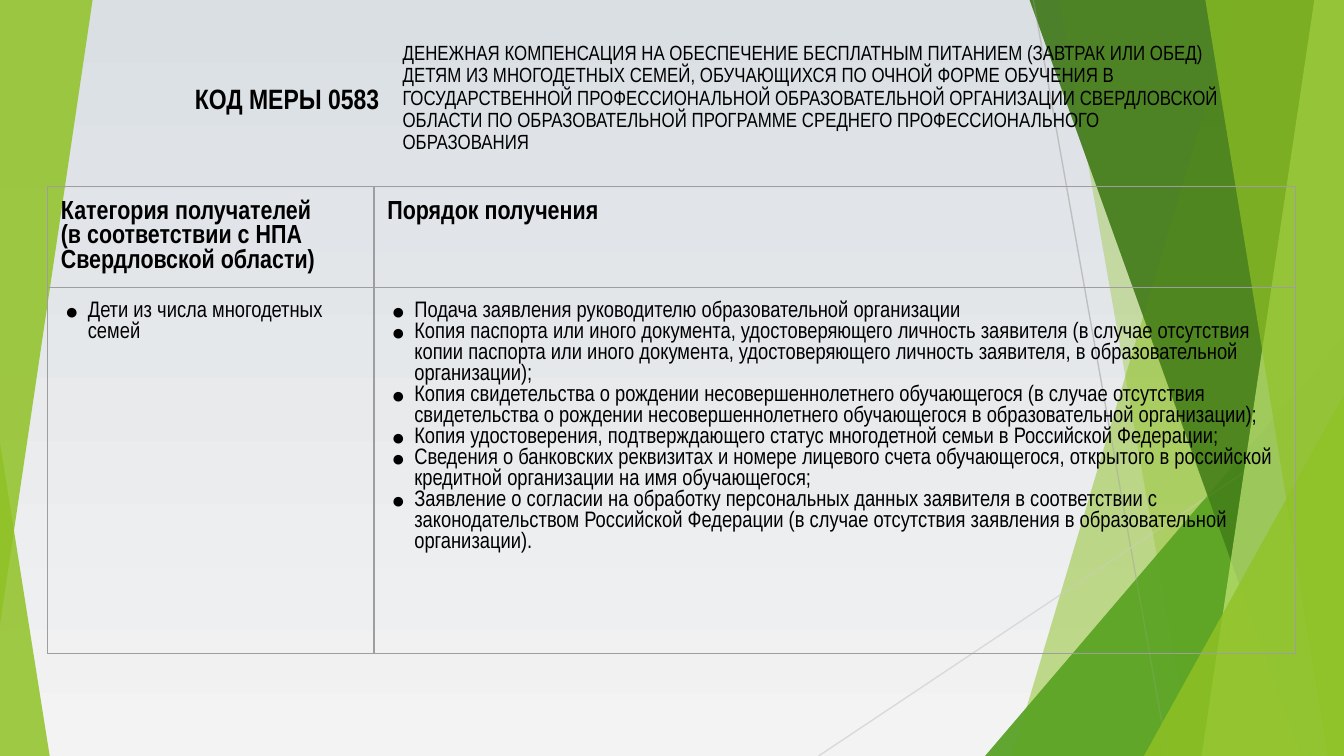
from dataclasses import dataclass

from lxml import etree
from pptx import Presentation
from pptx.dml.color import RGBColor
from pptx.enum.shapes import MSO_CONNECTOR, MSO_SHAPE
from pptx.enum.text import MSO_ANCHOR, PP_ALIGN
from pptx.oxml.ns import qn
from pptx.util import Cm, Pt

TRIANGLE = MSO_SHAPE.ISOSCELES_TRIANGLE
STRAIGHT = MSO_CONNECTOR.STRAIGHT
MIDDLE = MSO_ANCHOR.MIDDLE
LEFT, RIGHT = PP_ALIGN.LEFT, PP_ALIGN.RIGHT


@dataclass(frozen=True)
class Theme:
    font: str = "Arial Narrow"
    text: str = "000000"
    sky: str = "DADFE4"
    ground: str = "F3F3F3"
    lime: str = "90C226"
    green: str = "54A021"
    forest: str = "3F7819"
    pale: str = "C0E474"
    steep_line: str = "BFBFBF"
    flat_line: str = "D9D9D9"
    border: str = "9E9E9E"
    code_size: int = 15
    header_size: int = 14
    body_size: int = 12
    title_size: int = 11


theme = Theme()
WIDTH, HEIGHT = 25.4, 14.29

presentation = Presentation()
presentation.slide_width = Cm(WIDTH)
presentation.slide_height = Cm(HEIGHT)
slide = presentation.slides.add_slide(presentation.slide_layouts[6])

background = slide.background.fill
background.gradient()
background.gradient_angle = 270
for stop, color in zip(background.gradient_stops, (theme.sky, theme.ground)):
    stop.color.rgb = RGBColor.from_string(color)


def paint(shape, color, opacity):
    shape.shadow.inherit = False
    shape.fill.solid()
    shape.fill.fore_color.rgb = RGBColor.from_string(color)
    color_node = shape.fill._xPr.find(qn("a:solidFill"))[0]
    etree.SubElement(color_node, qn("a:alpha"), val=str(opacity * 1000))
    shape.line.fill.background()


def add_text(paragraph, text, size, bold=False):
    run = paragraph.add_run()
    run.text = text
    run.font.name = theme.font
    run.font.size = Pt(size)
    run.font.bold = bold
    run.font.color.rgb = RGBColor.from_string(theme.text)


facets = [
    ("band", 23.39, 19.13, theme.lime, 30),
    ("band", 20.02, 22.53, theme.lime, 20),
    ("corner", 6.78, 7.94, theme.green, 72),
    ("band", 19.46, 24.59, theme.forest, 70),
    ("band", 24.84, 22.71, theme.pale, 70),
    ("band", 22.78, 25.1, theme.lime, 65),
    ("corner", 3.78, 6.82, theme.lime, 80),
]
left_wedges = [
    (8.36, 0.94, 5.93, 0, 0),
    (0, 1.75, 11.81, 1, 180),
]
guide_lines = [
    (19.53, 0, 22.07, HEIGHT, theme.steep_line),
    (WIDTH, 7.67, 15.47, HEIGHT, theme.flat_line),
]

for layer, (top, width, height, apex, rotation) in enumerate(left_wedges):
    if layer == 1:
        for x1, y1, x2, y2, color in guide_lines:
            connector = slide.shapes.add_connector(STRAIGHT, Cm(x1), Cm(y1), Cm(x2), Cm(y2))
            connector.line.color.rgb = RGBColor.from_string(color)
            connector.line.width = Pt(0.75)
            etree.SubElement(connector._element.spPr, qn("a:effectLst"))
    for kind, first, second, color, opacity in facets:
        if kind == "band":
            builder = slide.shapes.build_freeform(Cm(first), Cm(0))
            corners = [(WIDTH, 0), (WIDTH, HEIGHT), (second, HEIGHT)]
            builder.add_line_segments([(Cm(x), Cm(y)) for x, y in corners], close=True)
            facet = builder.convert_to_shape()
        else:
            facet = slide.shapes.add_shape(
                TRIANGLE, Cm(WIDTH - first), Cm(HEIGHT - second), Cm(first), Cm(second)
            )
            facet.adjustments[0] = 1
        paint(facet, color, opacity)
    wedge = slide.shapes.add_shape(TRIANGLE, Cm(0), Cm(top), Cm(width), Cm(height))
    wedge.adjustments[0] = apex
    wedge.rotation = rotation
    paint(wedge, theme.lime, 85)

header_cells = [
    ["Категория получателей", "(в соответствии с НПА Свердловской области)"],
    ["Порядок получения"],
]
body_cells = [
    ["Дети из числа многодетных семей"],
    [
        "Подача заявления руководителю образовательной организации",
        "Копия паспорта или иного документа, удостоверяющего личность заявителя (в случае отсутствия копии паспорта или иного документа, удостоверяющего личность заявителя, в образовательной организации);",
        "Копия свидетельства о рождении несовершеннолетнего обучающегося (в случае отсутствия свидетельства о рождении несовершеннолетнего обучающегося в образовательной организации);",
        "Копия удостоверения, подтверждающего статус многодетной семьи в Российской Федерации;",
        "Сведения о банковских реквизитах и номере лицевого счета обучающегося, открытого в российской кредитной организации на имя обучающегося;",
        "Заявление о согласии на обработку персональных данных заявителя в соответствии с законодательством Российской Федерации (в случае отсутствия заявления в образовательной организации).",
    ],
]

table = slide.shapes.add_table(2, 2, Cm(0.9), Cm(3.53), Cm(23.59), Cm(8.82)).table
table.first_row = False
table.horz_banding = False
for column, width in zip(table.columns, (6.17, 17.42)):
    column.width = Cm(width)
for row, height in zip(table.rows, (1.91, 6.91)):
    row.height = Cm(height)

for cell in table.iter_cells():
    cell.margin_left = cell.margin_right = Cm(0.25)
    cell.margin_top = cell.margin_bottom = Cm(0.25)
    properties = cell._tc.get_or_add_tcPr()
    for side in ("a:lnL", "a:lnR", "a:lnT", "a:lnB"):
        border = etree.SubElement(properties, qn(side), w=str(Pt(0.75)))
        border_fill = etree.SubElement(border, qn("a:solidFill"))
        etree.SubElement(border_fill, qn("a:srgbClr"), val=theme.border)
    cell.fill.background()

for column_index, lines in enumerate(header_cells):
    paragraph = table.cell(0, column_index).text_frame.paragraphs[0]
    for line_index, line in enumerate(lines):
        if line_index:
            paragraph.add_line_break()
        add_text(paragraph, line, theme.header_size, bold=True)

for column_index, items in enumerate(body_cells):
    text_frame = table.cell(1, column_index).text_frame
    for item_index, item in enumerate(items):
        paragraph = text_frame.add_paragraph() if item_index else text_frame.paragraphs[0]
        properties = paragraph._p.get_or_add_pPr()
        properties.set("marL", str(Cm(0.51)))
        properties.set("indent", str(Cm(-0.43)))
        bullet_color = etree.SubElement(properties, qn("a:buClr"))
        etree.SubElement(bullet_color, qn("a:srgbClr"), val=theme.text)
        etree.SubElement(properties, qn("a:buFont"), typeface="Arial")
        etree.SubElement(properties, qn("a:buChar"), char="●")
        add_text(paragraph, item, theme.body_size)

measure_title = "ДЕНЕЖНАЯ КОМПЕНСАЦИЯ НА ОБЕСПЕЧЕНИЕ БЕСПЛАТНЫМ ПИТАНИЕМ (ЗАВТРАК ИЛИ ОБЕД) ДЕТЯМ ИЗ МНОГОДЕТНЫХ СЕМЕЙ, ОБУЧАЮЩИХСЯ ПО ОЧНОЙ ФОРМЕ ОБУЧЕНИЯ В ГОСУДАРСТВЕННОЙ ПРОФЕССИОНАЛЬНОЙ ОБРАЗОВАТЕЛЬНОЙ ОРГАНИЗАЦИИ СВЕРДЛОВСКОЙ ОБЛАСТИ ПО ОБРАЗОВАТЕЛЬНОЙ ПРОГРАММЕ СРЕДНЕГО ПРОФЕССИОНАЛЬНОГО ОБРАЗОВАНИЯ"
headings = [
    ("КОД МЕРЫ 0583", 2.06, 5.36, 0.25, 0.25, RIGHT, 1.0, theme.code_size, True),
    (measure_title, 7.43, 16, 0.18, 0.1, LEFT, 0.9, theme.title_size, False),
]
for text, left, width, side_margin, end_margin, alignment, spacing, size, bold in headings:
    text_frame = slide.shapes.add_textbox(Cm(left), Cm(0.88), Cm(width), Cm(1.96)).text_frame
    text_frame.word_wrap = True
    text_frame.vertical_anchor = MIDDLE
    text_frame.margin_left = text_frame.margin_right = Cm(side_margin)
    text_frame.margin_top = text_frame.margin_bottom = Cm(end_margin)
    paragraph = text_frame.paragraphs[0]
    paragraph.alignment = alignment
    paragraph.line_spacing = spacing
    add_text(paragraph, text, size, bold)

presentation.save("out.pptx")
